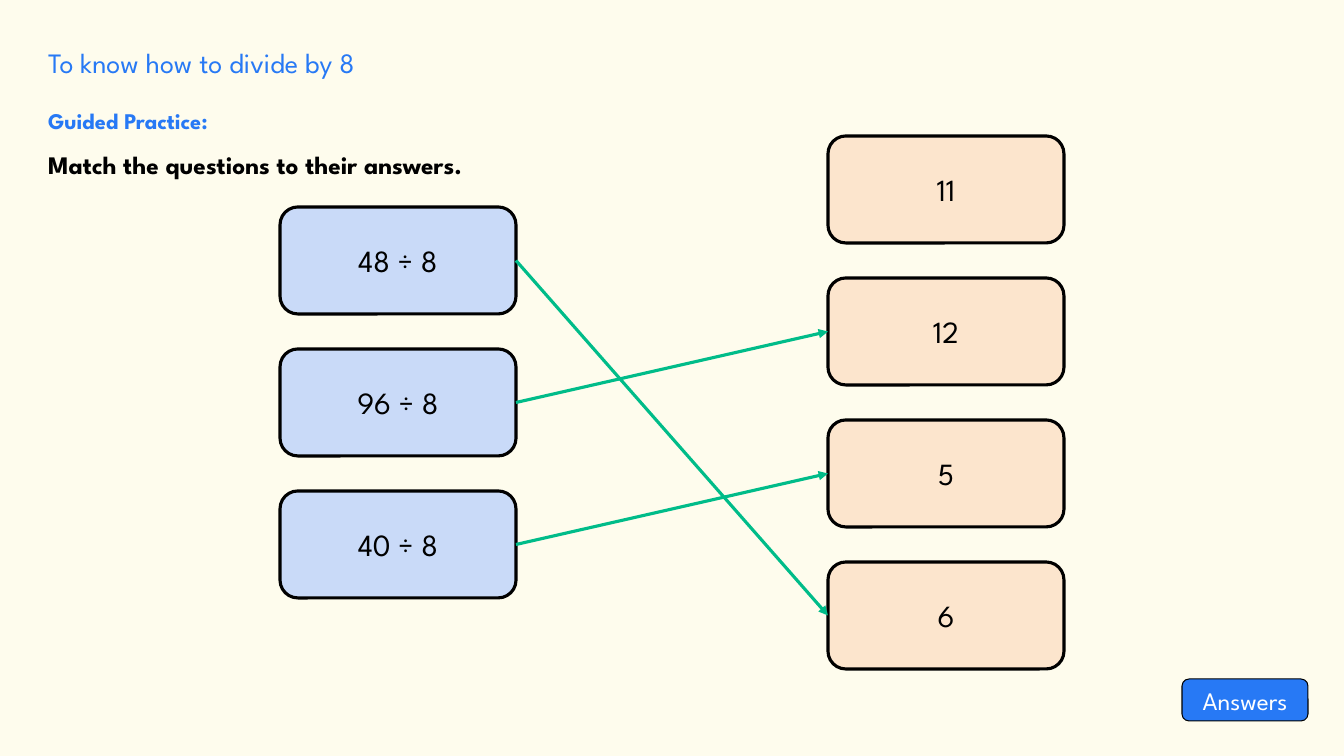
from dataclasses import dataclass

from lxml import etree
from pptx import Presentation
from pptx.dml.color import RGBColor
from pptx.enum.shapes import MSO_CONNECTOR, MSO_SHAPE
from pptx.enum.text import MSO_ANCHOR, MSO_AUTO_SIZE, PP_ALIGN
from pptx.oxml.ns import qn
from pptx.util import Emu, Pt

ROUND = MSO_SHAPE.ROUNDED_RECTANGLE
STRAIGHT = MSO_CONNECTOR.STRAIGHT
TOP, MIDDLE = MSO_ANCHOR.TOP, MSO_ANCHOR.MIDDLE
LEFT, CENTER = PP_ALIGN.LEFT, PP_ALIGN.CENTER
NO_FIT = MSO_AUTO_SIZE.NONE

SCALE = 914400 / 100.8
FONT = "League Spartan"
COLORS = {
    "cream": "FEFCED",
    "blue": "2779F5",
    "black": "000000",
    "white": "FFFFFF",
    "sky": "C9DAF8",
    "peach": "FCE5CD",
    "green": "00BC89",
}
LEFT_SITE, RIGHT_SITE = 1, 3
CARD_W, CARD_H, PITCH = 236, 107, 142


@dataclass
class Label:
    text: str
    x: int
    y: int
    w: int
    h: int
    size: int
    color: str
    bold: bool = False
    lead: float = 1.0


@dataclass
class Card:
    label: Label
    fill: str
    line: float = 2.25
    pad: int = 10


@dataclass
class Column:
    x: int
    y: int
    fill: str
    texts: list[str]


HEADS = [
    Label("To know how to divide by 8", 38, 40, 1212, 44, 20, "blue"),
    Label("Guided Practice:", 38, 89, 690, 35, 16, "blue", True, 1.5),
    Label("Match the questions to their answers.", 38, 129, 1271, 42, 18, "black", True, 1.5),
]
ASKS = Column(280, 207, "sky", ["48 ÷ 8", "96 ÷ 8", "40 ÷ 8"])
REPLIES = Column(828, 136, "peach", ["11", "12", "5", "6"])
MATCHES = {"48 ÷ 8": "6", "96 ÷ 8": "12", "40 ÷ 8": "5"}
BUTTON = Card(Label("Answers", 1182, 679, 126, 42, 18, "white"), "blue", 0.75, 5)


def px(count: int) -> Emu:
    return Emu(round(count * SCALE))


def rgb(name: str) -> RGBColor:
    return RGBColor.from_string(COLORS[name])


def apply(target, values: dict) -> None:
    for key, value in values.items():
        setattr(target, key, value)


def write(shape, label: Label, anchor, align, pad: int) -> None:
    frame = shape.text_frame
    frame.text = label.text
    apply(frame, {
        "word_wrap": True, "auto_size": NO_FIT, "vertical_anchor": anchor,
        "margin_left": px(10), "margin_right": px(10),
        "margin_top": px(pad), "margin_bottom": px(pad),
    })
    line = frame.paragraphs[0]
    apply(line, {"alignment": align, "line_spacing": label.lead, "space_before": Pt(0)})
    run = line.runs[0]
    apply(run.font, {"name": FONT, "size": Pt(label.size), "bold": label.bold})
    run.font.color.rgb = rgb(label.color)


def add_head(holder, label: Label) -> None:
    apply(holder, {
        "left": px(label.x), "top": px(label.y),
        "width": px(label.w), "height": px(label.h),
    })
    write(holder, label, TOP, LEFT, 5)
    props = holder.text_frame.paragraphs[0]._p.get_or_add_pPr()
    props.set("marL", "0")
    props.set("indent", "0")
    etree.SubElement(props, qn("a:buNone"))


def add_card(slide, card: Card):
    label = card.label
    shape = slide.shapes.add_shape(ROUND, px(label.x), px(label.y), px(label.w), px(label.h))
    shape.shadow.inherit = False
    shape.fill.solid()
    shape.fill.fore_color.rgb = rgb(card.fill)
    shape.line.color.rgb = rgb("black")
    shape.line.width = Pt(card.line)
    write(shape, label, MIDDLE, CENTER, card.pad)
    return shape


def add_column(slide, column: Column) -> dict:
    cards = {}
    for row, text in enumerate(column.texts):
        label = Label(text, column.x, column.y + row * PITCH, CARD_W, CARD_H, 22, "black")
        cards[text] = add_card(slide, Card(label, column.fill))
    return cards


def add_arrow(slide, start, end) -> None:
    arrow = slide.shapes.add_connector(STRAIGHT, 0, 0, 0, 0)
    arrow.begin_connect(start, RIGHT_SITE)
    arrow.end_connect(end, LEFT_SITE)
    arrow.line.color.rgb = rgb("green")
    arrow.line.width = Pt(2.25)
    etree.SubElement(arrow.line._get_or_add_ln(), qn("a:tailEnd"), type="triangle")
    etree.SubElement(arrow._element.spPr, qn("a:effectLst"))


def main() -> None:
    deck = Presentation()
    apply(deck, {"slide_width": px(1344), "slide_height": px(756)})
    slide = deck.slides.add_slide(deck.slide_layouts[3])
    slide.background.fill.solid()
    slide.background.fill.fore_color.rgb = rgb("cream")
    for holder, label in zip(slide.placeholders, HEADS):
        add_head(holder, label)
    asks = add_column(slide, ASKS)
    replies = add_column(slide, REPLIES)
    for ask, reply in MATCHES.items():
        add_arrow(slide, asks[ask], replies[reply])
    add_card(slide, BUTTON)
    deck.save("out.pptx")


if __name__ == "__main__":
    main()
